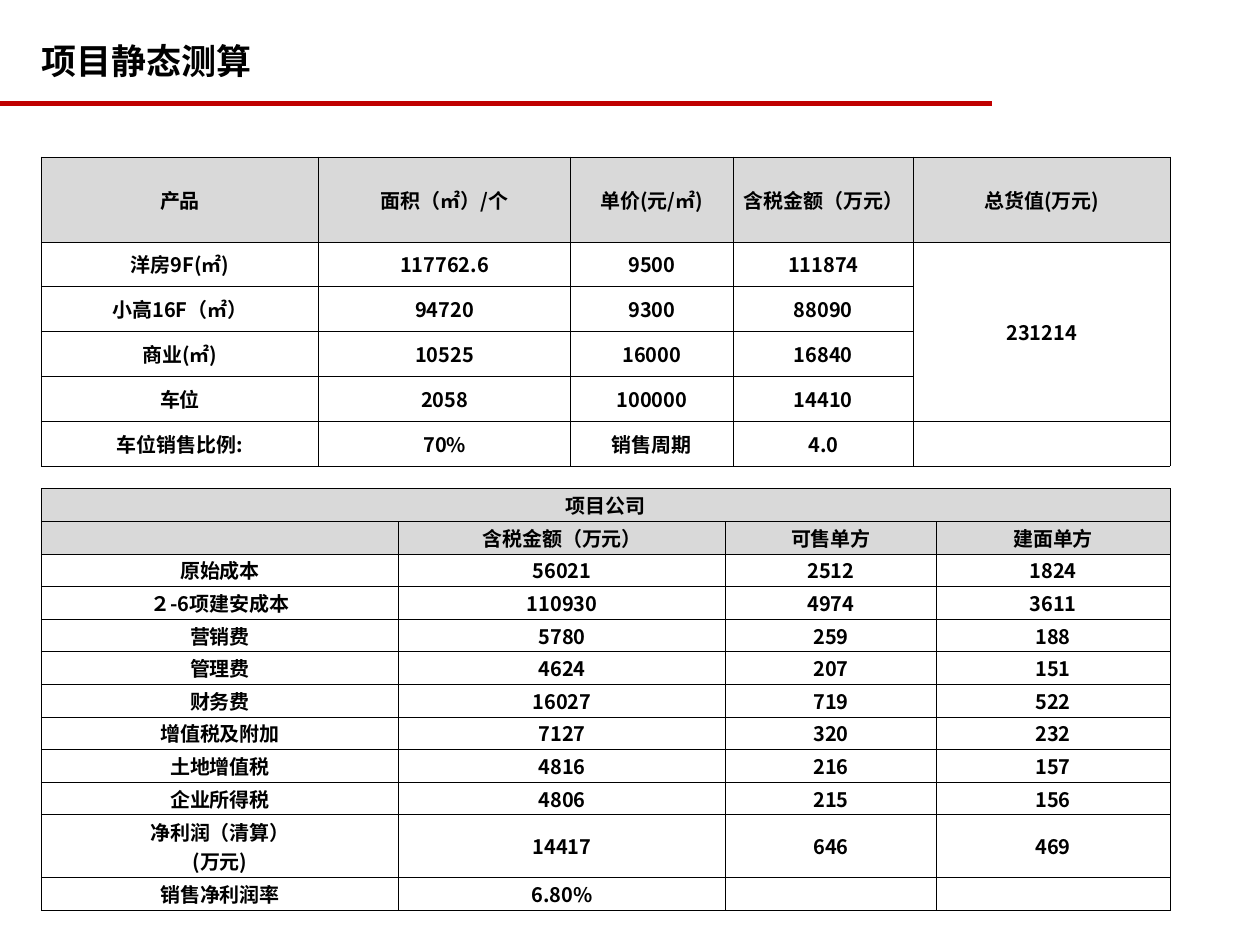
import pptx
import pptx.util
import pptx.dml.color
import pptx.enum.shapes
import pptx.enum.text
import pptx.oxml.ns
from lxml import etree

Pt = pptx.util.Pt
COLORS = {"text": "000000", "rule": "C00000", "header": "D9D9D9", "border": "000000"}


def rgb(name):
    return pptx.dml.color.RGBColor.from_string(COLORS[name])


def add_child(parent, tag, **attributes):
    return etree.SubElement(parent, pptx.oxml.ns.qn(tag), attributes)


class PageBuilder:
    font = "Noto Sans CJK SC"
    title_size = 28
    table_size = 16
    border_width = 0.5

    def __init__(self, page):
        self.page = page

    def format_text(self, frame, size, align):
        for para in frame.paragraphs:
            para.alignment = align
            for span in para.runs:
                span.font.size = Pt(size)
                span.font.bold = True
                span.font.name = self.font
                span.font.color.rgb = rgb("text")
                add_child(span.font._element, "a:ea", typeface=self.font)

    def title(self, text, left, top, width, height):
        box = self.page.shapes.title
        box.left, box.top, box.width, box.height = Pt(left), Pt(top), Pt(width), Pt(height)
        frame = box.text_frame
        frame.text = text
        frame.word_wrap = True
        frame.vertical_anchor = pptx.enum.text.MSO_ANCHOR.TOP
        self.format_text(frame, self.title_size, pptx.enum.text.PP_ALIGN.LEFT)

    def rule(self, left, right, y, width):
        line = self.page.shapes.add_connector(
            pptx.enum.shapes.MSO_CONNECTOR.STRAIGHT, Pt(left), Pt(y), Pt(right), Pt(y))
        line.line.color.rgb = rgb("rule")
        line.line.width = Pt(width)
        add_child(line._element.spPr, "a:effectLst")

    def format_cell(self, cell, header):
        cell.margin_left = cell.margin_right = cell.margin_top = cell.margin_bottom = 0
        cell.vertical_anchor = pptx.enum.text.MSO_ANCHOR.MIDDLE
        properties = cell._tc.get_or_add_tcPr()
        for side in ("a:lnL", "a:lnR", "a:lnT", "a:lnB"):
            border = add_child(properties, side, w=str(Pt(self.border_width)))
            fill = add_child(border, "a:solidFill")
            add_child(fill, "a:srgbClr", val=COLORS["border"])
        if header:
            cell.fill.solid()
            cell.fill.fore_color.rgb = rgb("header")
        else:
            cell.fill.background()
        self.format_text(cell.text_frame, self.table_size, pptx.enum.text.PP_ALIGN.CENTER)

    def table(self, left, top, widths, heights, rows, header_rows, merge):
        frame = self.page.shapes.add_table(
            len(heights), len(widths), Pt(left), Pt(top), Pt(sum(widths)), Pt(sum(heights)))
        table = frame.table
        table.first_row = table.horz_banding = False
        for column, width in zip(table.columns, widths):
            column.width = Pt(width)
        for row, height in zip(table.rows, heights):
            row.height = Pt(height)
        for r, texts in enumerate(rows):
            for c, text in enumerate(texts):
                cell = table.cell(r, c)
                cell.text_frame.text = text
                self.format_cell(cell, r < header_rows)
        first, last = merge
        table.cell(*first).merge(table.cell(*last))


SALES = [
    ["产品", "面积（㎡）/个", "单价(元/㎡)", "含税金额（万元）", "总货值(万元)"],
    ["洋房9F(㎡)", "117762.6", "9500", "111874", "231214"],
    ["小高16F（㎡）", "94720", "9300", "88090", ""],
    ["商业(㎡)", "10525", "16000", "16840", ""],
    ["车位", "2058", "100000", "14410", ""],
    ["车位销售比例:", "70%", "销售周期", "4.0", ""],
]
COSTS = [
    ["项目公司", "", "", ""],
    ["", "含税金额（万元）", "可售单方", "建面单方"],
    ["原始成本", "56021", "2512", "1824"],
    ["２-6项建安成本", "110930", "4974", "3611"],
    ["营销费", "5780", "259", "188"],
    ["管理费", "4624", "207", "151"],
    ["财务费", "16027", "719", "522"],
    ["增值税及附加", "7127", "320", "232"],
    ["土地增值税", "4816", "216", "157"],
    ["企业所得税", "4806", "215", "156"],
    ["净利润（清算）\v(万元)", "14417", "646", "469"],
    ["销售净利润率", "6.80%", "", ""],
]


def main():
    deck = pptx.Presentation()
    deck.slide_width, deck.slide_height = Pt(1008), Pt(756)
    builder = PageBuilder(deck.slides.add_slide(deck.slide_layouts[5]))

    # Heading with its red rule
    builder.rule(0, 793.5, 82.8, 4.5)
    builder.title("项目静态测算", 26, 28, 586, 41)

    # Sales value by product
    builder.table(33, 125.5, [222, 201.5, 130, 144.5, 205], [68] + [35.9] * 5,
                  SALES, header_rows=1, merge=((1, 4), (4, 4)))

    # Costs and profit of the project company
    builder.table(33, 391, [286, 261.5, 168.5, 187], [26.1] * 10 + [50.4, 26.1],
                  COSTS, header_rows=2, merge=((0, 0), (0, 3)))

    deck.save("out.pptx")


if __name__ == "__main__":
    main()
